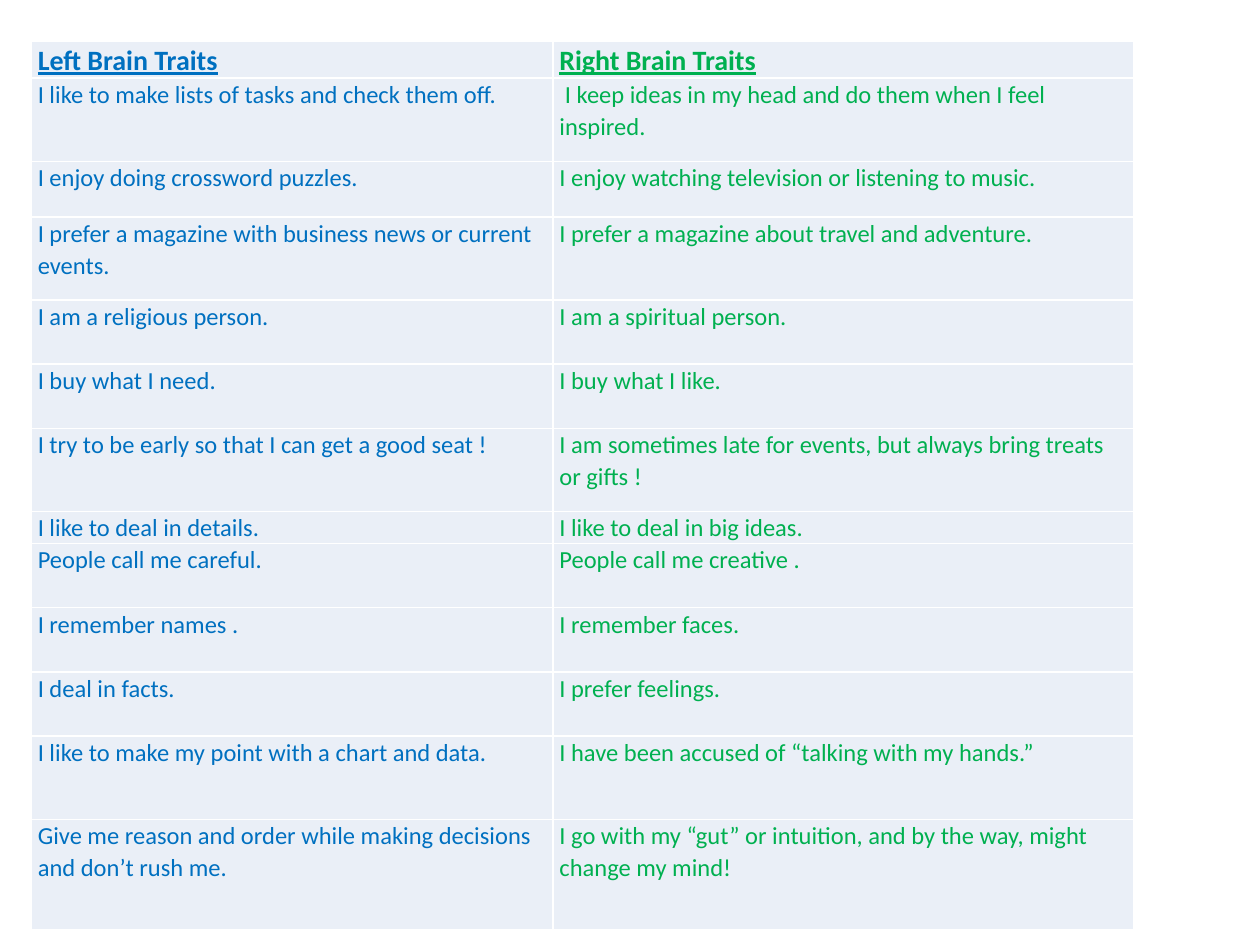
from pptx import Presentation
from pptx.dml.color import RGBColor
from pptx.oxml.ns import qn
from pptx.util import Inches, Pt
from lxml.etree import SubElement

COLORS = {
    "left": "0070C0",
    "right": "00B050",
    "cell": "EAEFF7",
    "border": "FFFFFF",
}

COLUMN_WIDTHS = [4.14, 4.61]

HEADER_HEIGHT = 0.29
HEADER = ("Left Brain Traits", "Right Brain Traits")

TRAITS = [
    (0.66, "I like to make lists of tasks and check them off.",
     " I keep ideas in my head and do them when I feel inspired."),
    (0.44, "I enjoy doing crossword puzzles.",
     "I enjoy watching television or listening to music."),
    (0.66, "I prefer a magazine with business news or current events.",
     "I prefer a magazine about travel and adventure."),
    (0.51, "I am a religious person.", "I am a spiritual person."),
    (0.51, "I buy what I need.", "I buy what I like."),
    (0.66, "I try to be early so that I can get a good seat !",
     "I am sometimes late for events, but always bring treats or gifts !"),
    (0.25, "I like to deal in details.", "I like to deal in big ideas."),
    (0.51, "People call me careful.", "People call me creative ."),
    (0.51, "I remember names .", "I remember faces."),
    (0.51, "I deal in facts.", "I prefer feelings."),
    (0.66, "I like to make my point with a chart and data.",
     "I have been accused of “talking with my hands.”"),
    (0.88, "Give me reason and order while making decisions and don’t rush me.",
     "I go with my “gut” or intuition, and by the way, might change my mind!"),
]


def add_borders(cell):
    properties = cell._tc.get_or_add_tcPr()
    for side in ("a:lnL", "a:lnR", "a:lnT", "a:lnB"):
        line = SubElement(properties, qn(side), w=str(Pt(1)))
        fill = SubElement(line, qn("a:solidFill"))
        SubElement(fill, qn("a:srgbClr"), val=COLORS["border"])


def format_cell(cell, text, color, is_header):
    add_borders(cell)
    cell.fill.solid()
    cell.fill.fore_color.rgb = RGBColor.from_string(COLORS["cell"])
    cell.margin_left = cell.margin_right = Inches(0.05)
    cell.margin_top = cell.margin_bottom = 0
    cell.text = text
    paragraph = cell.text_frame.paragraphs[0]
    paragraph.line_spacing = 1.07
    font = paragraph.runs[0].font
    font.name = "Calibri"
    font.size = Pt(16 if is_header else 14)
    font.bold = font.underline = is_header
    font.color.rgb = RGBColor.from_string(COLORS[color])


def add_traits_table(slide):
    rows = [(HEADER_HEIGHT, *HEADER), *TRAITS]
    table = slide.shapes.add_table(
        len(rows), len(COLUMN_WIDTHS), Inches(0.25), Inches(0.33),
        Inches(sum(COLUMN_WIDTHS)), Inches(sum(row[0] for row in rows)),
    ).table
    table.first_row = False
    table.horz_banding = False
    for column, width in zip(table.columns, COLUMN_WIDTHS):
        column.width = Inches(width)
    for index, (height, *texts) in enumerate(rows):
        table.rows[index].height = Inches(height)
        for cell, text, color in zip(table.rows[index].cells, texts, ("left", "right")):
            format_cell(cell, text, color, index == 0)


def main():
    presentation = Presentation()
    presentation.slide_width = Inches(10)
    presentation.slide_height = Inches(7.5)
    slide = presentation.slides.add_slide(presentation.slide_layouts[6])
    add_traits_table(slide)
    presentation.save("out.pptx")


if __name__ == "__main__":
    main()
